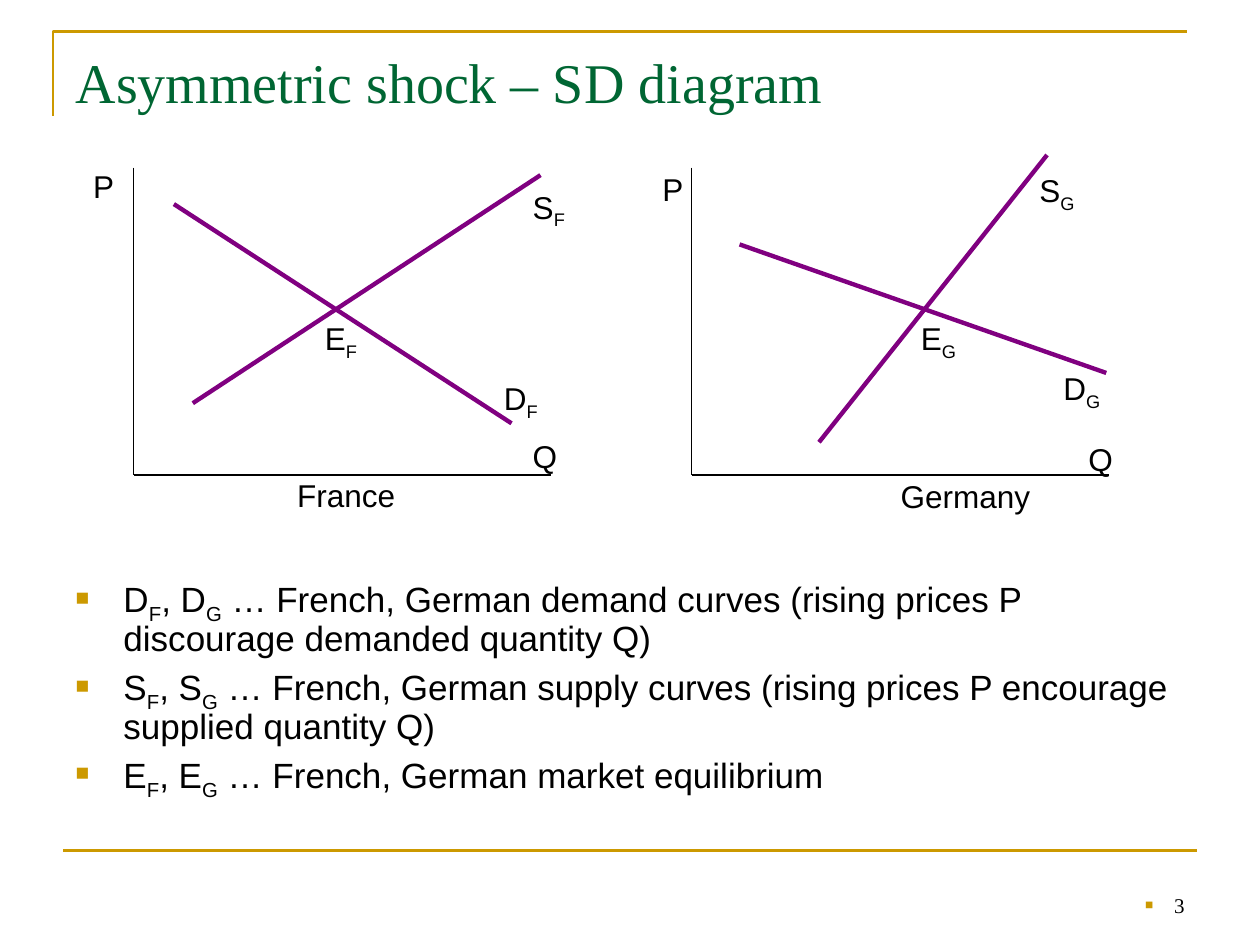
from dataclasses import dataclass

import pptx
import pptx.dml.color
import pptx.enum.shapes
import pptx.enum.text
import pptx.oxml
import pptx.oxml.ns
import pptx.util
from pptx.util import Inches

ANCHOR = pptx.enum.text.MSO_ANCHOR
ALIGN = pptx.enum.text.PP_ALIGN


@dataclass(frozen=True)
class Theme:
    gold: str = "CC9900"
    green: str = "006633"
    purple: str = "800080"
    black: str = "000000"
    serif: str = "Times New Roman"
    sans: str = "Arial"
    title: int = 32
    body: int = 20
    label: int = 18
    number: int = 12
    rule: float = 1.5
    axis: float = 0.75
    curve: float = 2.5


T = Theme()


def rgb(value):
    return pptx.dml.color.RGBColor.from_string(value)


def add_run(p, text, size, font, color, subscript=False):
    r = p.add_run()
    r.text = text
    r.font.size = pptx.util.Pt(size)
    r.font.name = font
    r.font.color.rgb = rgb(color)
    if subscript:
        r._r.get_or_add_rPr().set("baseline", "-25000")


def add_runs(p, text, size, font=T.sans, color=T.black):
    """Add text run by run; the letter after each underscore is a subscript."""
    first, *rest = text.split("_")
    add_run(p, first, size, font, color)
    for part in rest:
        add_run(p, part[0], size, font, color, subscript=True)
        if part[1:]:
            add_run(p, part[1:], size, font, color)


def set_bullet(p, indent):
    pPr = p._p.get_or_add_pPr()
    pPr.set("marL", str(Inches(indent)))
    pPr.set("indent", str(-Inches(indent)))
    ns = pptx.oxml.ns.nsdecls("a")
    for xml in (f'<a:buClr {ns}><a:srgbClr val="{T.gold}"/></a:buClr>',
                f'<a:buSzPct {ns} val="65000"/>',
                f'<a:buFont {ns} typeface="{T.sans}"/>',
                f'<a:buChar {ns} char="■"/>'):
        pPr.append(pptx.oxml.parse_xml(xml))


def add_line(s, start, end, color, width):
    line = s.shapes.add_connector(
        pptx.enum.shapes.MSO_CONNECTOR.STRAIGHT,
        *(Inches(v) for v in (*start, *end)))
    line.line.color.rgb = rgb(color)
    line.line.width = pptx.util.Pt(width)
    line._element.spPr.append(
        pptx.oxml.parse_xml(f'<a:effectLst {pptx.oxml.ns.nsdecls("a")}/>'))


def add_corner(s, left, top, right, bottom):
    builder = s.shapes.build_freeform(Inches(left), Inches(bottom))
    builder.add_line_segments(
        [(Inches(left), Inches(top)), (Inches(right), Inches(top))], close=False)
    corner = builder.convert_to_shape()
    corner.shadow.inherit = False
    corner.fill.background()
    corner.line.color.rgb = rgb(T.gold)
    corner.line.width = pptx.util.Pt(T.rule)


def add_label(s, text, left, top, width):
    tf = s.shapes.add_textbox(
        *(Inches(v) for v in (left, top, width, 0.4))).text_frame
    tf.word_wrap = True
    add_runs(tf.paragraphs[0], text, T.label)


def place(sp, left, top, width, height, anchor):
    sp.left, sp.top, sp.width, sp.height = (
        Inches(v) for v in (left, top, width, height))
    sp.text_frame.word_wrap = True
    sp.text_frame.vertical_anchor = anchor
    return sp.text_frame


def add_market(s, origin, curves, labels):
    """Draw the P and Q axes, the two curves and the labels of one market."""
    x, y = origin
    add_line(s, (x, 1.33), origin, T.black, T.axis)
    add_line(s, origin, (x + 3.31, y), T.black, T.axis)
    for start, end in curves:
        add_line(s, start, end, T.purple, T.curve)
    for label in labels:
        add_label(s, *label)


def add_title(s, text):
    tf = place(s.shapes.title, 0.5, 0.3, 9, 0.69, ANCHOR.MIDDLE)
    p = tf.paragraphs[0]
    p.alignment = ALIGN.LEFT
    add_runs(p, text, T.title, T.serif, T.green)


def add_list(s, items):
    tf = place(s.placeholders[1], 0.5, 4.54, 9, 1.97, ANCHOR.TOP)
    for i, item in enumerate(items):
        p = tf.add_paragraph() if i else tf.paragraphs[0]
        p.line_spacing = 0.9
        set_bullet(p, 0.38)
        add_runs(p, item, T.body)


def add_number(s, text):
    sp = s.shapes.add_textbox(0, 0, 0, 0)
    p = place(sp, 7.17, 6.83, 2.33, 0.5, ANCHOR.BOTTOM).paragraphs[0]
    p.alignment = ALIGN.RIGHT
    set_bullet(p, 0.23)
    add_runs(p, text, T.number, T.serif)


def main():
    prs = pptx.Presentation()
    prs.slide_width, prs.slide_height = Inches(10), Inches(7.5)
    s = prs.slides.add_slide(prs.slide_layouts[1])

    # Frame rules and page number
    add_corner(s, 0.42, 0.25, 9.42, 0.92)
    add_line(s, (0.5, 6.75), (9.5, 6.75), T.gold, T.rule)
    add_number(s, "3")

    add_title(s, "Asymmetric shock – SD diagram")

    # French market: supply, then demand
    add_market(
        s, (1.06, 3.77),
        [((1.53, 3.2), (4.29, 1.39)), ((1.38, 1.62), (4.06, 3.36))],
        [("S_F", 4.13, 1.44, 0.47), ("D_F", 3.9, 2.96, 0.55),
         ("E_F", 2.48, 2.48, 0.55), ("P", 0.64, 1.28, 0.47),
         ("Q", 4.13, 3.42, 0.47), ("France", 2.26, 3.73, 1.34)])

    # German market: supply, then demand
    add_market(
        s, (5.49, 3.77),
        [((6.5, 3.51), (8.31, 1.23)), ((5.87, 1.94), (8.78, 2.96))],
        [("S_G", 8.15, 1.31, 0.55), ("D_G", 8.34, 2.88, 0.55),
         ("E_G", 7.21, 2.48, 0.55), ("P", 5.16, 1.3, 0.47),
         ("Q", 8.54, 3.44, 0.47), ("Germany", 7.05, 3.74, 1.34)])

    # Explanation of the symbols
    add_list(s, [
        "D_F, D_G … French, German demand curves "
        "(rising prices P discourage demanded quantity Q)",
        "S_F, S_G … French, German supply curves "
        "(rising prices P encourage supplied quantity Q)",
        "E_F, E_G … French, German market equilibrium",
    ])

    prs.save("out.pptx")


if __name__ == "__main__":
    main()
